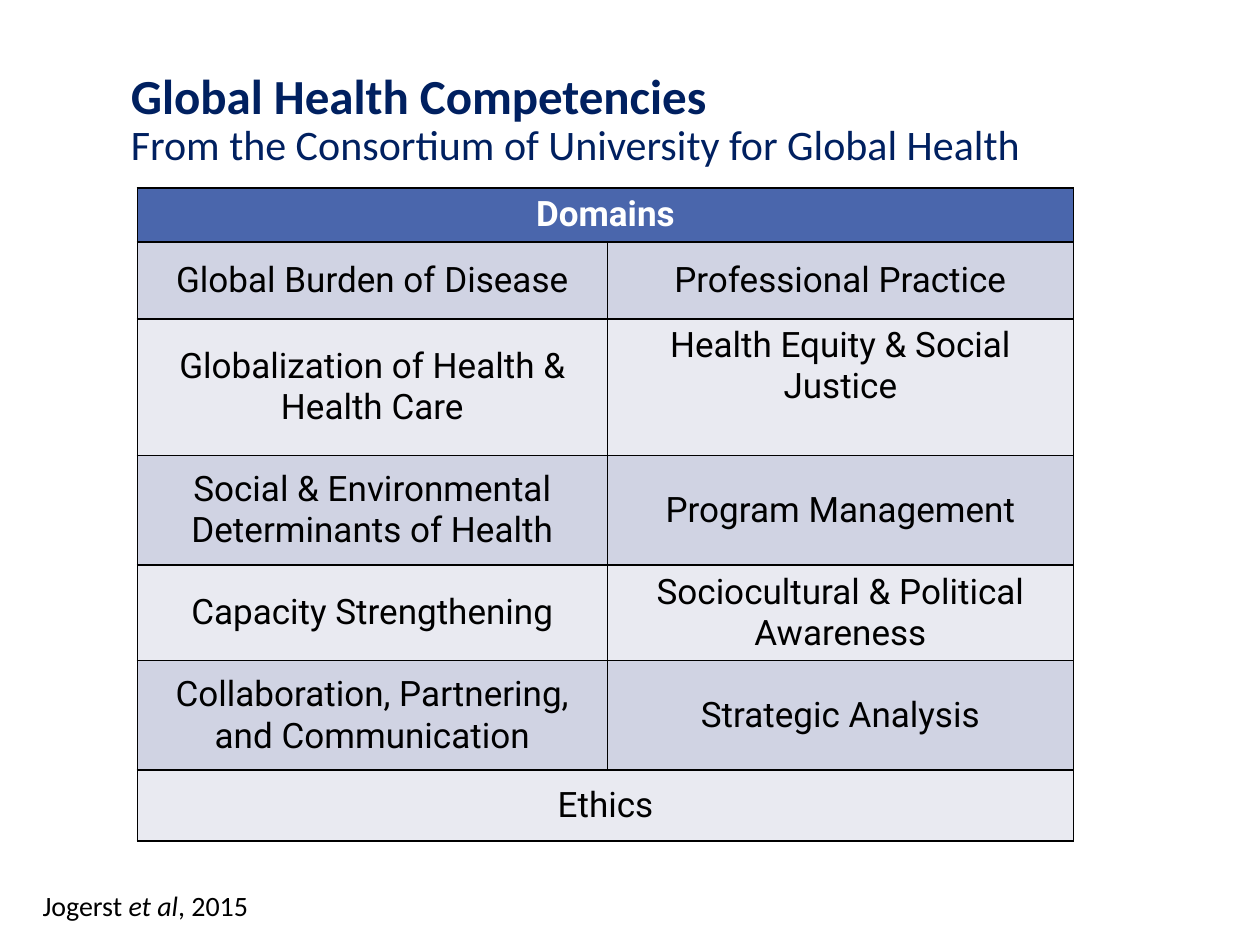
from lxml.etree import SubElement
from pptx import Presentation
from pptx.dml.color import RGBColor
from pptx.enum.text import MSO_ANCHOR, PP_ALIGN
from pptx.oxml.ns import qn
from pptx.util import Inches, Pt

NAVY = RGBColor(0x00, 0x20, 0x60)
BLUE = RGBColor(0x4A, 0x66, 0xAC)
BAND_DARK = RGBColor(0xD0, 0xD3, 0xE3)
BAND_LIGHT = RGBColor(0xE9, 0xEA, 0xF1)
BLACK = RGBColor(0, 0, 0)
WHITE = RGBColor(0xFF, 0xFF, 0xFF)

COLUMN_WIDTHS = (3.73, 3.7)
ROW_HEIGHTS = (0.43, 0.61, 1.08, 0.87, 0.76, 0.87, 0.56)
DOMAINS = (
    ("Domains",),
    ("Global Burden of Disease", "Professional Practice"),
    ("Globalization of Health & Health Care", "Health Equity & Social Justice"),
    ("Social & Environmental Determinants of Health", "Program Management"),
    ("Capacity Strengthening", "Sociocultural & Political Awareness"),
    ("Collaboration, Partnering, and Communication", "Strategic Analysis"),
    ("Ethics",),
)
RAISED_DOMAIN = "Health Equity & Social Justice"


def style_font(font, name, size, color, bold=False):
    font.name, font.size, font.bold = name, Pt(size), bold
    font.color.rgb = color


def add_text_frame(slide, box):
    frame = slide.shapes.add_textbox(*map(Inches, box)).text_frame
    frame.word_wrap = True
    return frame


def add_heading(slide, box):
    frame = add_text_frame(slide, box)
    frame.text = ("Global Health Competencies\n"
                  "From the Consortium of University for Global Health")
    for line, size, bold in zip(frame.paragraphs, (28, 24), (True, False)):
        line.line_spacing = 0.9
        style_font(line.runs[0].font, "Calibri", size, NAVY, bold)


def add_borders(cell):
    properties = cell._tc.get_or_add_tcPr()
    for side in ("a:lnL", "a:lnR", "a:lnT", "a:lnB"):
        line = SubElement(properties, qn(side), w=str(Pt(1)))
        fill = SubElement(line, qn("a:solidFill"))
        SubElement(fill, qn("a:srgbClr"), val=str(BLACK))


def fill_cell(cell, domain, fill, color, bold):
    cell.text = domain
    cell.vertical_anchor = MSO_ANCHOR.MIDDLE
    paragraph = cell.text_frame.paragraphs[0]
    paragraph.alignment = PP_ALIGN.CENTER
    style_font(paragraph.runs[0].font, "Roboto", 20, color, bold)
    if domain == RAISED_DOMAIN:
        cell.margin_bottom = Inches(0.38)


def add_domain_table(slide, left, top):
    table = slide.shapes.add_table(
        len(ROW_HEIGHTS), len(COLUMN_WIDTHS), Inches(left), Inches(top),
        Inches(sum(COLUMN_WIDTHS)), Inches(sum(ROW_HEIGHTS))).table
    for column, width in zip(table.columns, COLUMN_WIDTHS):
        column.width = Inches(width)
    for index, (row, height, domains) in enumerate(
            zip(table.rows, ROW_HEIGHTS, DOMAINS)):
        row.height = Inches(height)
        header = index == 0
        fill = BLUE if header else BAND_DARK if index % 2 else BAND_LIGHT
        for cell in row.cells:
            add_borders(cell)
            cell.fill.solid()
            cell.fill.fore_color.rgb = fill
        if len(domains) == 1:
            row.cells[0].merge(row.cells[1])
        for cell, domain in zip(row.cells, domains):
            fill_cell(cell, domain, fill, WHITE if header else BLACK, header)


def add_citation(slide, box):
    citation = add_text_frame(slide, box).paragraphs[0]
    for words, italic in (("Jogerst ", False), ("et al", True), (", 2015", False)):
        run = citation.add_run()
        run.text = words
        style_font(run.font, "Calibri", 16, BLACK)
        run.font.italic = italic


def main():
    deck = Presentation()
    deck.slide_width, deck.slide_height = Inches(10), Inches(7.5)
    slide = deck.slides.add_slide(deck.slide_layouts[6])
    add_domain_table(slide, 1.09, 1.49)
    add_heading(slide, (0.94, 0.52, 8.62, 1.45))
    add_citation(slide, (0.24, 7, 2.94, 0.37))
    deck.save("out.pptx")


if __name__ == "__main__":
    main()
